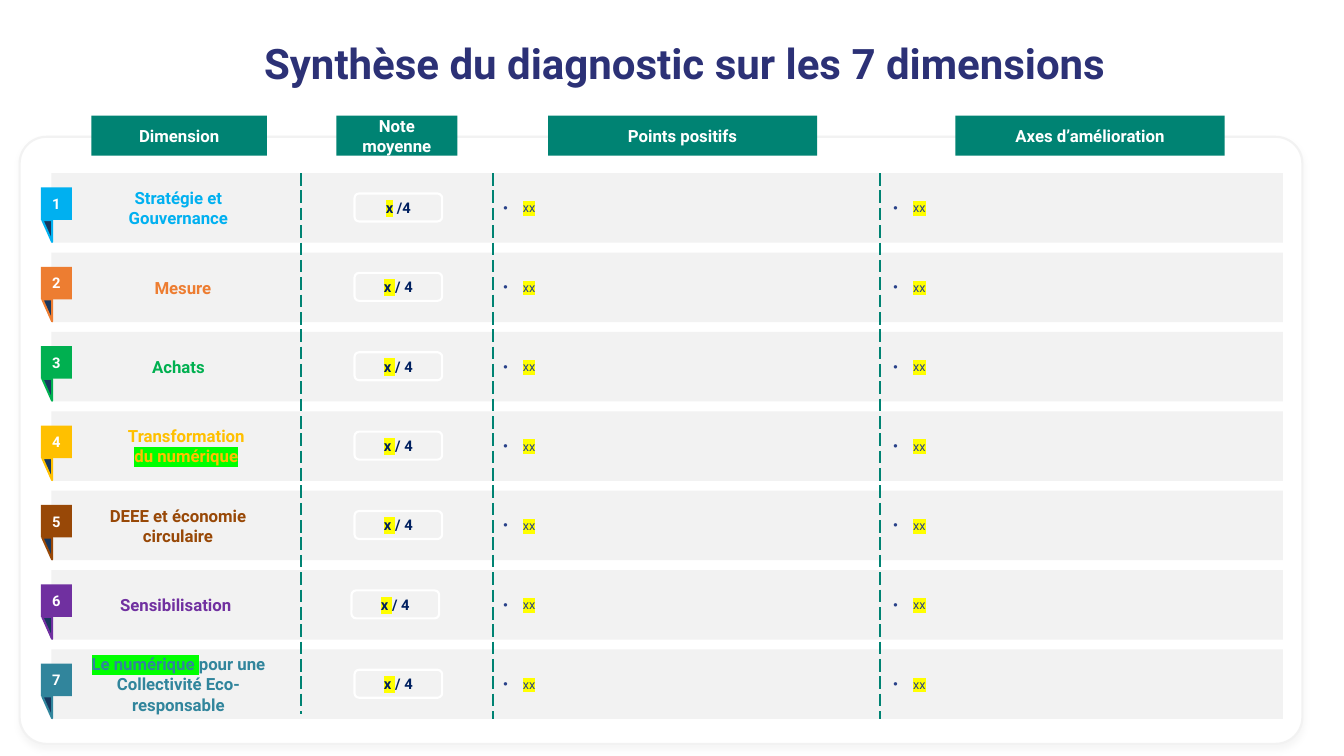
from lxml.etree import SubElement
from pptx import Presentation
from pptx.dml.color import RGBColor
from pptx.enum.dml import MSO_LINE
from pptx.enum.shapes import MSO_CONNECTOR, MSO_SHAPE
from pptx.enum.text import MSO_ANCHOR, PP_ALIGN
from pptx.oxml.ns import qn
from pptx.util import Inches, Pt

WHITE = RGBColor(0xFF, 0xFF, 0xFF)
BAND = RGBColor(0xF2, 0xF2, 0xF2)
GREEN = RGBColor(0x00, 0x83, 0x73)
TITLE_BLUE = RGBColor(0x2C, 0x31, 0x76)
FOLD_BLUE = RGBColor(0x17, 0x37, 0x5E)
SCORE_BLUE = RGBColor(0x00, 0x20, 0x60)
POINT_BLUE = RGBColor(0x29, 0x42, 0x89)
SKY = RGBColor(0x00, 0xB0, 0xF0)
ORANGE = RGBColor(0xED, 0x7D, 0x31)
LEAF = RGBColor(0x00, 0xB0, 0x50)
GOLD = RGBColor(0xFF, 0xC0, 0x00)
BROWN = RGBColor(0x98, 0x48, 0x07)
PURPLE = RGBColor(0x70, 0x30, 0xA0)
TEAL = RGBColor(0x31, 0x85, 0x9C)
YELLOW_MARK = RGBColor(0xFF, 0xFF, 0x00)
GREEN_MARK = RGBColor(0x00, 0xFF, 0x00)

ROW_TOP, ROW_STEP, ROW_HEIGHT = 2.29, 1.05, 0.92
SCORE = [("x ", YELLOW_MARK), ("/ 4", None)]
FIRST_SCORE = [("x", YELLOW_MARK), (" /4", None)]
HEADERS = [
    ("Dimension", 1.21, 2.32),
    ("Note moyenne", 4.45, 1.6),
    ("Points positifs", 7.25, 3.56),
    ("Axes d’amélioration", 12.64, 3.56),
]
DIVIDERS = [(3.98, 9.44), (6.52, 9.51), (11.64, 9.51)]
POINT_COLUMNS = [(6.56, 5), (11.72, 5.12)]
DIMENSIONS = [
    (SKY, [("Stratégie et Gouvernance", None)], 1.1, 2.52, FIRST_SCORE, 4.69),
    (ORANGE, [("Mesure", None)], 1.67, 1.5, SCORE, 4.69),
    (LEAF, [("Achats", None)], 1, 2.72, SCORE, 4.69),
    (GOLD, [("Transformation ", None), ("du numérique", GREEN_MARK)], 1.55, 1.83, SCORE, 4.69),
    (BROWN, [("DEEE et économie circulaire", None)], 1.06, 2.59, SCORE, 4.69),
    (PURPLE, [("Sensibilisation", None)], 1.46, 1.73, SCORE, 4.65),
    (TEAL, [("Le numérique ", GREEN_MARK), ("pour une Collectivité Eco-responsable", None)],
     1.1, 2.52, SCORE, 4.69),
]


def write(shape, spans, size, color, bold=True, align=PP_ALIGN.CENTER, anchor=MSO_ANCHOR.MIDDLE):
    """Fill a shape with one paragraph of (text, highlight) spans."""
    frame = shape.text_frame
    frame.word_wrap = True
    frame.vertical_anchor = anchor
    para = frame.paragraphs[0]
    para.alignment = align
    for text, mark in spans:
        span = para.add_run()
        span.text = text
        for name, value in {"name": "Roboto", "size": Pt(size), "bold": bold}.items():
            setattr(span.font, name, value)
        span.font.color.rgb = color
        if mark is not None:
            properties = span.font._element
            highlight = SubElement(properties, qn("a:highlight"))
            SubElement(highlight, qn("a:srgbClr"), val=str(mark))
            properties.find(qn("a:solidFill")).addnext(highlight)
    return para


def add_block(shapes, kind, box, fill, line=None):
    """Add a filled preset shape with an optional 2 pt outline."""
    shape = shapes.add_shape(kind, *map(Inches, box))
    shape.shadow.inherit = False
    shape.fill.solid()
    shape.fill.fore_color.rgb = fill
    if line is None:
        shape.line.fill.background()
    else:
        shape.line.color.rgb = line
        shape.line.width = Pt(2)
    return shape


def add_title(page, box):
    """Place and format the title placeholder."""
    title = page.shapes.title
    for name, value in zip(("left", "top", "width", "height"), box):
        setattr(title, name, Inches(value))
    for side in ("left", "top", "right", "bottom"):
        setattr(title.text_frame, f"margin_{side}", 0)
    write(title, [("Synthèse du diagnostic sur les 7 dimensions", None)], 40, TITLE_BLUE,
          anchor=MSO_ANCHOR.TOP)


def add_card(page, box):
    """Add the rounded card with its faint shadow."""
    card = add_block(page.shapes, MSO_SHAPE.ROUNDED_RECTANGLE, box, WHITE, BAND)
    card.adjustments[0] = 0.044
    effects = card._element.spPr.find(qn("a:effectLst"))
    shadow = SubElement(effects, qn("a:outerShdw"), blurRad=str(Pt(6)), dist=str(Pt(4)),
                        dir="5400000", algn="t", rotWithShape="0")
    tint = SubElement(shadow, qn("a:srgbClr"), val="000000")
    SubElement(tint, qn("a:alpha"), val="3000")


def add_badge(page, box, number, color):
    """Add a numbered square with a folded ribbon tail under it."""
    left, top, width, height = box
    group = page.shapes.add_group_shape()
    fold = add_block(group.shapes, MSO_SHAPE.ISOSCELES_TRIANGLE,
                     (left - 0.06, top + height + 0.08, 0.29, 0.13), FOLD_BLUE, color)
    fold.adjustments[0] = 1
    fold.rotation = 270
    square = add_block(group.shapes, MSO_SHAPE.RECTANGLE, box, color)
    write(square, [(str(number), None)], 14, WHITE)


def add_point(page, box):
    """Add one bulleted point in a comment column."""
    point = page.shapes.add_textbox(*map(Inches, box))
    para = write(point, [("xx", YELLOW_MARK)], 12, POINT_BLUE, False, PP_ALIGN.JUSTIFY)
    properties = para._p.get_or_add_pPr()
    properties.set("marL", str(Inches(0.26)))
    properties.set("indent", str(-Inches(0.26)))
    SubElement(properties, qn("a:buFont"), typeface="Arial")
    SubElement(properties, qn("a:buChar"), char="•")


def add_dimension(page, box, number, dimension):
    """Add one row: band, badge, label, score and points."""
    color, label, label_left, label_width, score, score_left = dimension
    left, top, width, height = box
    add_block(page.shapes, MSO_SHAPE.RECTANGLE, box, BAND)
    add_badge(page, (left - 0.14, top + 0.19, 0.41, 0.43), number, color)
    name = page.shapes.add_textbox(*map(Inches, (label_left, top, label_width, height)))
    write(name, label, 16, color)
    pill = add_block(page.shapes, MSO_SHAPE.ROUNDED_RECTANGLE,
                     (score_left, top + 0.27, 1.16, 0.37), BAND, WHITE)
    write(pill, score, 14, SCORE_BLUE)
    for point_left, point_width in POINT_COLUMNS:
        add_point(page, (point_left, top + 0.07, point_width, 0.78))


def add_header(page, box, text):
    """Add one green column header."""
    header = add_block(page.shapes, MSO_SHAPE.RECTANGLE, box, GREEN)
    write(header, [(text, None)], 16, WHITE)


def add_divider(page, left, top, bottom):
    """Add one dashed vertical column divider."""
    divider = page.shapes.add_connector(MSO_CONNECTOR.STRAIGHT,
                                        *map(Inches, (left, top, left, bottom)))
    for name, value in {"width": Pt(1.5), "dash_style": MSO_LINE.LONG_DASH}.items():
        setattr(divider.line, name, value)
    divider.line.color.rgb = GREEN
    SubElement(divider._element.spPr, qn("a:effectLst"))


def main():
    """Build and save the deck."""
    deck = Presentation()
    deck.slide_width, deck.slide_height = Inches(17.78), Inches(10)
    page = deck.slides.add_slide(deck.slide_layouts[5])
    add_title(page, (2.24, 0.5, 13.63, 0.67))
    add_card(page, (0.26, 1.81, 16.97, 8.03))
    for index, dimension in enumerate(DIMENSIONS):
        box = (0.68, ROW_TOP + index * ROW_STEP, 16.29, ROW_HEIGHT)
        add_dimension(page, box, index + 1, dimension)
    for text, left, width in HEADERS:
        add_header(page, (left, 1.53, width, 0.53), text)
    for left, bottom in DIVIDERS:
        add_divider(page, left, ROW_TOP, bottom)
    deck.save("out.pptx")


if __name__ == "__main__":
    main()
